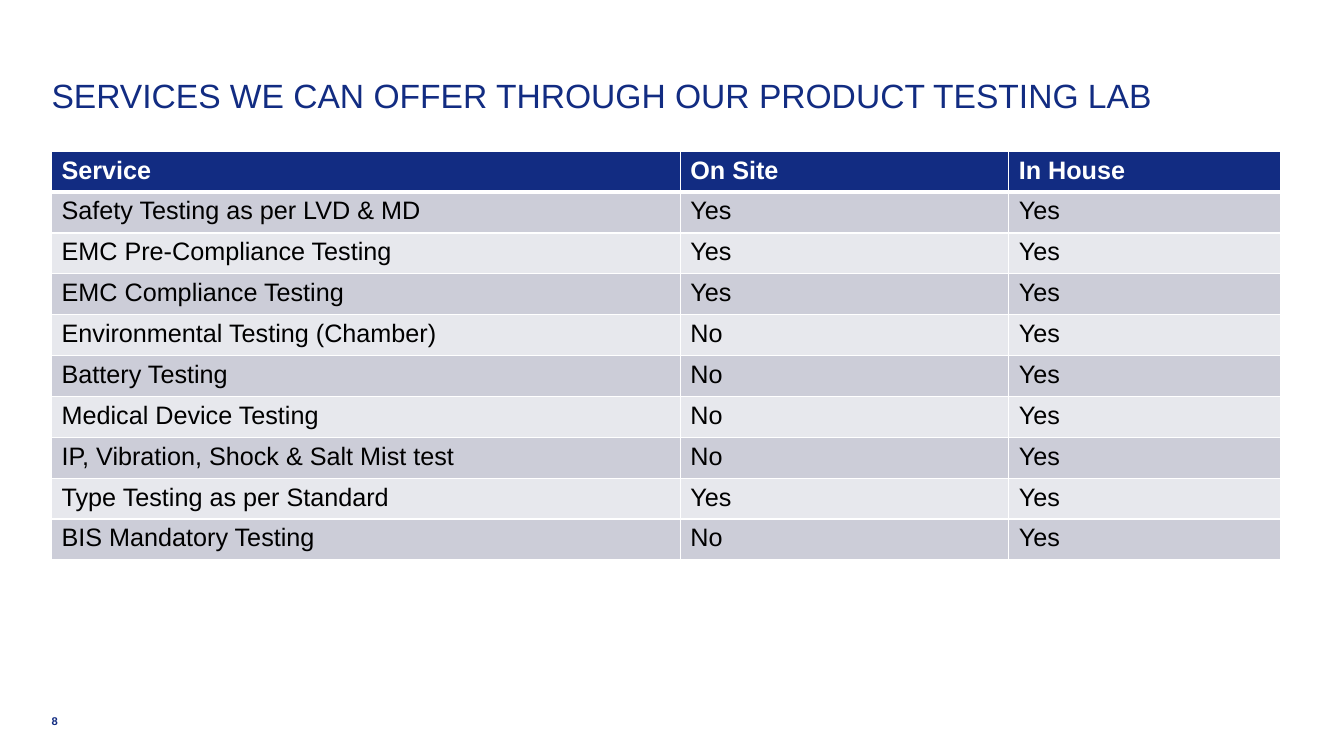
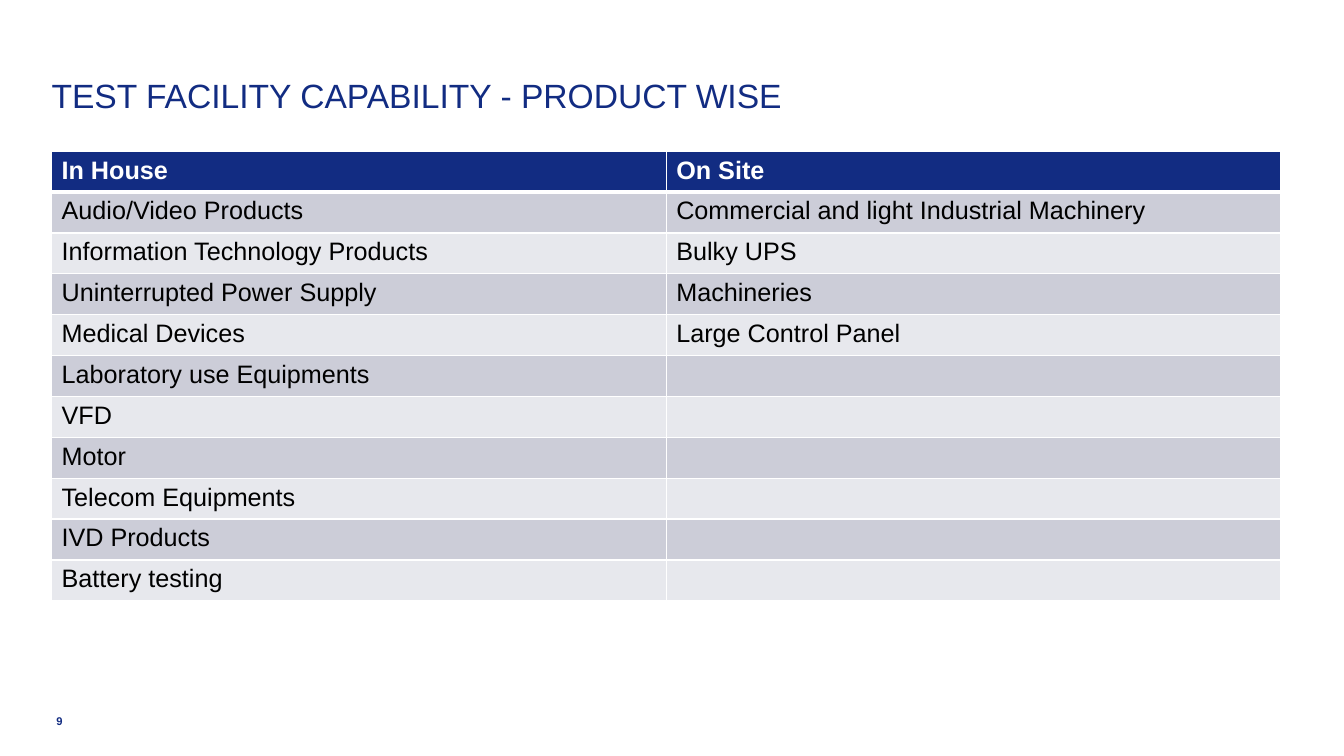
import dataclasses

import pptx
import pptx.dml.color
import pptx.enum.text
import pptx.oxml
import pptx.oxml.ns
import pptx.util

Cm = pptx.util.Cm
Pt = pptx.util.Pt


@dataclasses.dataclass(frozen=True)
class Theme:
    font: str = "Arial"
    navy: str = "122C82"
    white: str = "FFFFFF"
    black: str = "000000"
    bands: tuple = ("CCCDD8", "E7E8ED")
    title_size: int = 24
    table_size: int = 18
    number_size: int = 8
    thin_line: int = 1
    thick_line: int = 3
    left: float = 1.3
    width: float = 30.99
    table_top: float = 3.81
    row_height: float = 1.03


class Deck:
    def __init__(self, theme):
        self.theme = theme
        self.deck = pptx.Presentation()
        self.deck.slide_width = Cm(33.88)
        self.deck.slide_height = Cm(19.05)
        self.page = None

    def add_page(self, title):
        self.page = self.deck.slides.add_slide(self.deck.slide_layouts[5])
        box = self.page.shapes.title
        box.left, box.top = Cm(self.theme.left), Cm(1)
        box.width, box.height = Cm(self.theme.width), Cm(1.9)
        self.prepare_frame(box.text_frame, pptx.enum.text.MSO_ANCHOR.BOTTOM)
        self.add_span(box.text_frame, title, self.theme.title_size, self.theme.navy)

    def add_number(self, number, left, width):
        box = self.page.shapes.add_textbox(Cm(left), Cm(18), Cm(width), Cm(0.33))
        self.prepare_frame(box.text_frame, pptx.enum.text.MSO_ANCHOR.TOP)
        self.add_span(box.text_frame, str(number), self.theme.number_size,
                      self.theme.navy, bold=True)

    def add_table(self, rows, widths):
        theme = self.theme
        frame = self.page.shapes.add_table(
            len(rows), len(widths), Cm(theme.left), Cm(theme.table_top),
            Cm(theme.width), Cm(theme.row_height * len(rows)))
        table = frame.table
        for column, width in zip(table.columns, widths):
            column.width = Cm(width)
        for index, texts in enumerate(rows):
            table.rows[index].height = Cm(theme.row_height)
            header = index == 0
            fill = theme.navy if header else theme.bands[(index - 1) % 2]
            color = theme.white if header else theme.black
            top = theme.thick_line if index == 1 else theme.thin_line
            bottom = theme.thick_line if header else theme.thin_line
            for column, text in enumerate(texts):
                cell = table.cell(index, column)
                self.add_borders(cell, top, bottom)
                cell.fill.solid()
                cell.fill.fore_color.rgb = self.rgb(fill)
                if text:
                    self.add_span(cell.text_frame, text, theme.table_size, color, header)

    def add_borders(self, cell, top, bottom):
        properties = cell._tc.get_or_add_tcPr()
        thin = self.theme.thin_line
        for side, points in (("L", thin), ("R", thin), ("T", top), ("B", bottom)):
            properties.append(pptx.oxml.parse_xml(
                f'<a:ln{side} {pptx.oxml.ns.nsdecls("a")} w="{Pt(points)}">'
                f'<a:solidFill><a:srgbClr val="{self.theme.white}"/></a:solidFill>'
                f'</a:ln{side}>'))

    def prepare_frame(self, frame, anchor):
        frame.word_wrap = True
        frame.auto_size = pptx.enum.text.MSO_AUTO_SIZE.NONE
        frame.vertical_anchor = anchor
        frame.margin_left = frame.margin_right = 0
        frame.margin_top = frame.margin_bottom = 0

    def add_span(self, frame, text, size, color, bold=False):
        para = frame.paragraphs[0]
        para.alignment = pptx.enum.text.PP_ALIGN.LEFT
        span = para.add_run()
        span.text = text
        span.font.name = self.theme.font
        span.font.size = Pt(size)
        span.font.bold = bold
        span.font.color.rgb = self.rgb(color)

    def rgb(self, color):
        return pptx.dml.color.RGBColor.from_string(color)


SERVICES = [
    ("Service", "On Site", "In House"),
    ("Safety Testing as per LVD & MD", "Yes", "Yes"),
    ("EMC Pre-Compliance Testing", "Yes", "Yes"),
    ("EMC Compliance Testing", "Yes", "Yes"),
    ("Environmental Testing (Chamber)", "No", "Yes"),
    ("Battery Testing", "No", "Yes"),
    ("Medical Device Testing", "No", "Yes"),
    ("IP, Vibration, Shock & Salt Mist test", "No", "Yes"),
    ("Type Testing as per Standard", "Yes", "Yes"),
    ("BIS Mandatory Testing", "No", "Yes"),
]

PRODUCTS = [
    ("In House", "On Site"),
    ("Audio/Video Products", "Commercial and light Industrial Machinery"),
    ("Information Technology Products", "Bulky UPS"),
    ("Uninterrupted Power Supply", "Machineries"),
    ("Medical Devices", "Large Control Panel"),
    ("Laboratory use Equipments", ""),
    ("VFD", ""),
    ("Motor", ""),
    ("Telecom Equipments", ""),
    ("IVD Products", ""),
    ("Battery testing", ""),
]


def main():
    theme = Theme()
    slides = Deck(theme)

    slides.add_page("SERVICES WE CAN OFFER THROUGH OUR PRODUCT TESTING LAB")
    slides.add_number(8, theme.left, 1)
    slides.add_table(SERVICES, (15.85, 8.28, 6.86))

    slides.add_page("TEST FACILITY CAPABILITY - PRODUCT WISE")
    slides.add_number(9, 1.42, 0.88)
    slides.add_table(PRODUCTS, (theme.width / 2, theme.width / 2))

    slides.deck.save("out.pptx")


if __name__ == "__main__":
    main()
